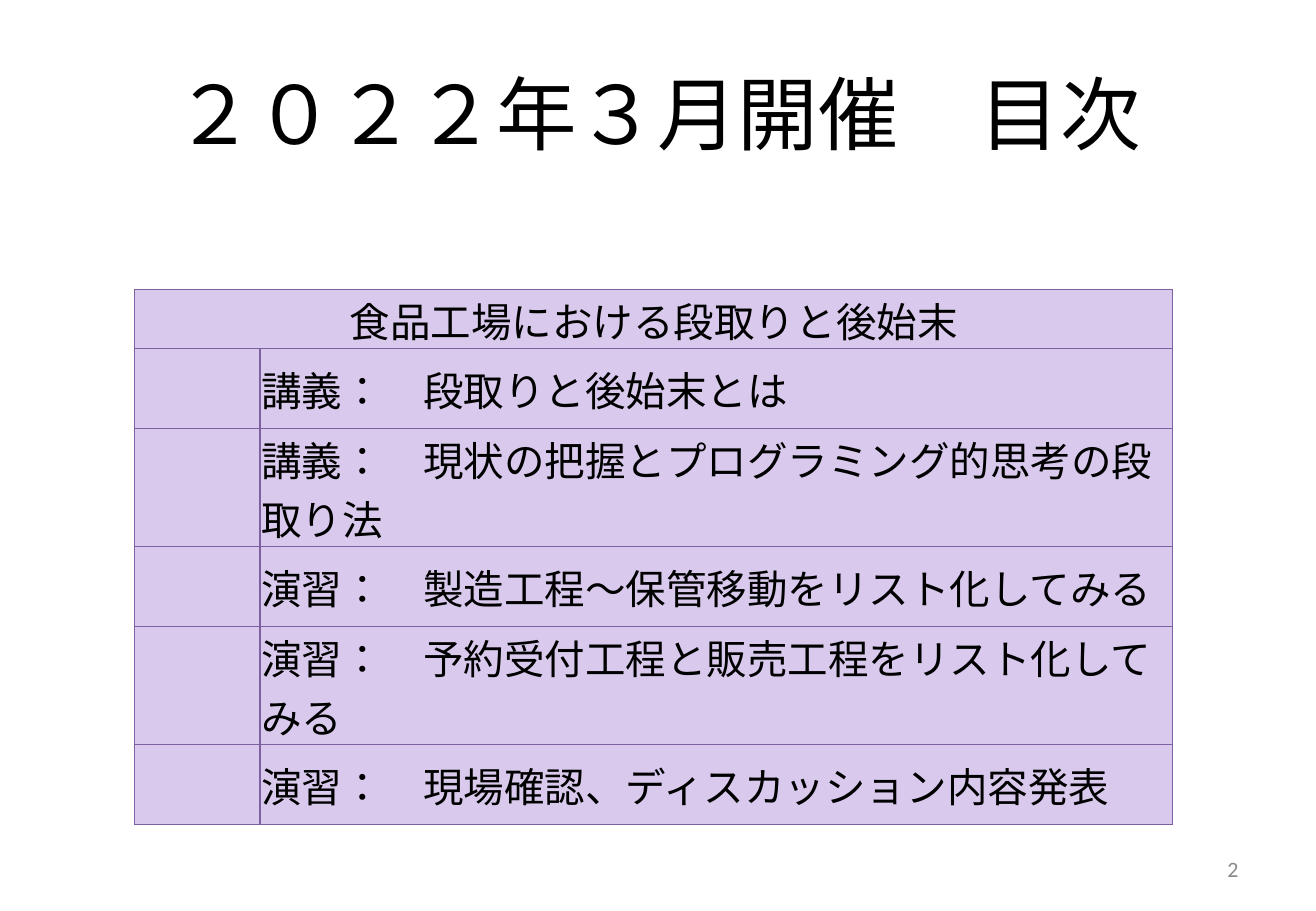
from dataclasses import dataclass

from lxml.etree import SubElement
from pptx import Presentation
from pptx.dml.color import RGBColor
from pptx.enum.lang import MSO_LANGUAGE_ID as Language
from pptx.enum.text import MSO_ANCHOR as Anchor, MSO_AUTO_SIZE as AutoSize, PP_ALIGN as Align
from pptx.oxml.ns import qn
from pptx.slide import Slide
from pptx.table import Table, _Cell as Cell
from pptx.text.text import TextFrame
from pptx.util import Inches, Pt

BLACK = RGBColor(0x00, 0x00, 0x00)
GRAY = RGBColor(0x89, 0x89, 0x89)
LAVENDER = RGBColor(0xD9, 0xCA, 0xED)
PURPLE = RGBColor(0x7D, 0x60, 0xA0)
FONT = "Calibri"
HEADING_HEIGHT = 0.49
COLUMN_WIDTHS = (1.03, 7.51)


@dataclass(frozen=True)
class Session:
    kind: str
    topic: str
    height: float = 0.66


SESSIONS = (
    Session("講義", "段取りと後始末とは"),
    Session("講義", "現状の把握とプログラミング的思考の段取り法", 0.97),
    Session("演習", "製造工程〜保管移動をリスト化してみる"),
    Session("演習", "予約受付工程と販売工程をリスト化してみる", 0.97),
    Session("演習", "現場確認、ディスカッション内容発表"),
)


def write(frame: TextFrame, text: str, *, size: float, color: RGBColor = BLACK,
          align: Align = Align.LEFT) -> None:
    paragraph = frame.paragraphs[0]
    paragraph.alignment = align
    run = paragraph.add_run()
    run.text = text
    run.font.name = FONT
    run.font.size = Pt(size)
    run.font.color.rgb = color
    run.font.language_id = Language.JAPANESE


def add_borders(cell: Cell) -> None:
    """Outline a cell; borders must precede its fill in the XML."""
    properties = cell._tc.get_or_add_tcPr()
    for side in ("a:lnL", "a:lnR", "a:lnT", "a:lnB"):
        line = SubElement(properties, qn(side), w=str(Pt(0.75)))
        fill = SubElement(line, qn("a:solidFill"))
        SubElement(fill, qn("a:srgbClr"), val=str(PURPLE))


def style_cells(table: Table) -> None:
    for cell in table.iter_cells():
        add_borders(cell)
        cell.fill.solid()
        cell.fill.fore_color.rgb = LAVENDER
        cell.vertical_anchor = Anchor.MIDDLE
        cell.margin_left = cell.margin_right = cell.margin_top = Inches(0.01)
        cell.margin_bottom = 0


def add_title(slide: Slide) -> None:
    title = slide.shapes.title
    title.left, title.top = Inches(0.54), Inches(0.3)
    title.width, title.height = Inches(9.75), Inches(1.25)
    frame = title.text_frame
    frame.auto_size = AutoSize.NONE
    frame.vertical_anchor = Anchor.MIDDLE
    write(frame, "２０２２年３月開催　目次", size=47.7, align=Align.CENTER)


def add_agenda(slide: Slide) -> None:
    heights = [HEADING_HEIGHT] + [session.height for session in SESSIONS]
    table = slide.shapes.add_table(
        len(heights), len(COLUMN_WIDTHS), Inches(1.11), Inches(2.38),
        Inches(sum(COLUMN_WIDTHS)), Inches(sum(heights))).table
    for column, width in zip(table.columns, COLUMN_WIDTHS):
        column.width = Inches(width)
    for row, height in zip(table.rows, heights):
        row.height = Inches(height)
    style_cells(table)

    heading = table.cell(0, 0)
    heading.merge(table.cell(0, 1))
    write(heading.text_frame, "食品工場における段取りと後始末", size=24, align=Align.CENTER)
    for index, session in enumerate(SESSIONS, start=1):
        write(table.cell(index, 1).text_frame, f"{session.kind}：　{session.topic}", size=24)


def add_page_number(slide: Slide) -> None:
    box = slide.shapes.add_textbox(Inches(7.76), Inches(6.95), Inches(2.53), Inches(0.4))
    box.text_frame.word_wrap = True
    box.text_frame.vertical_anchor = Anchor.MIDDLE
    write(box.text_frame, "2", size=13, color=GRAY, align=Align.RIGHT)


def main() -> None:
    presentation = Presentation()
    presentation.slide_width, presentation.slide_height = Inches(10.83), Inches(7.5)
    slide = presentation.slides.add_slide(presentation.slide_layouts.get_by_name("Title Only"))
    add_title(slide)
    add_page_number(slide)
    add_agenda(slide)
    presentation.save("out.pptx")


if __name__ == "__main__":
    main()
